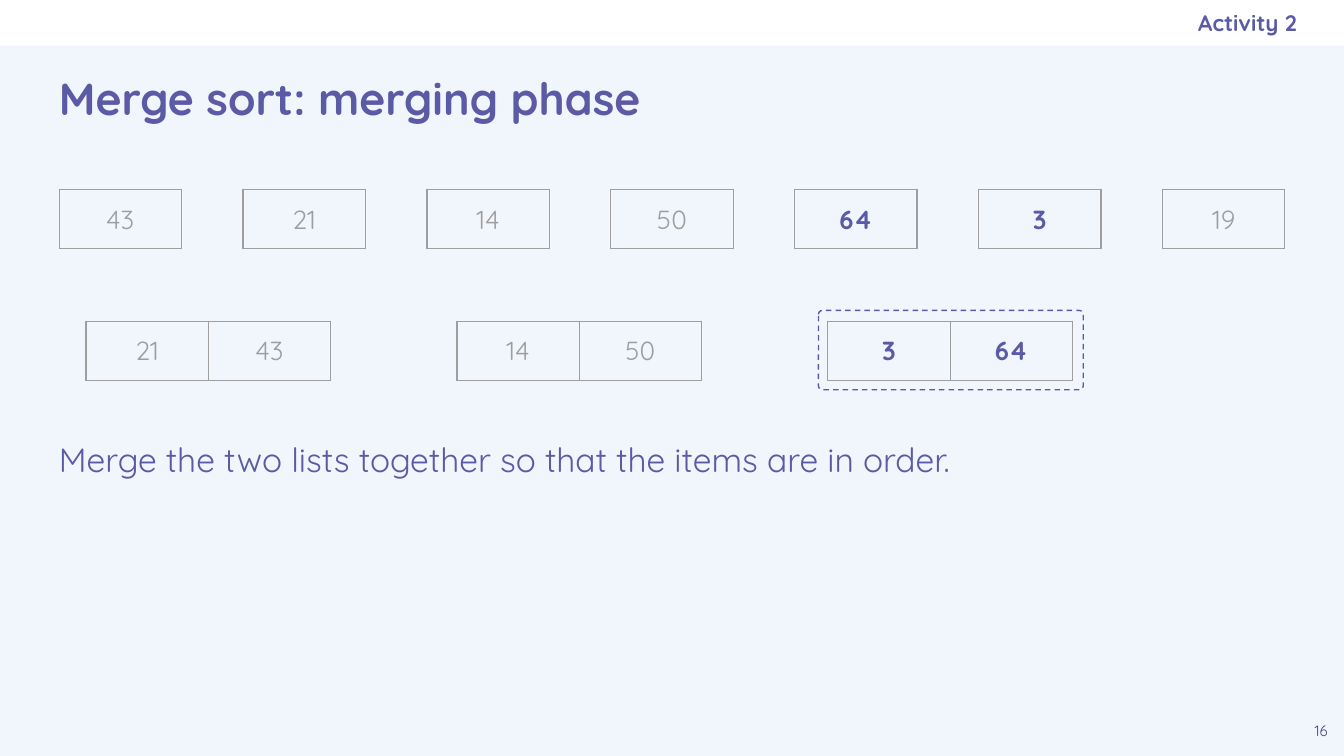
from lxml import etree
from pptx import Presentation
from pptx.dml.color import RGBColor
from pptx.enum import dml, shapes, text
from pptx.oxml.ns import qn
from pptx.util import Inches, Pt

PALE = RGBColor(0xF1, 0xF5, 0xFC)
WHITE = RGBColor(0xFF, 0xFF, 0xFF)
PURPLE = RGBColor(0x5B, 0x5B, 0xA5)
DARK = RGBColor(0x49, 0x49, 0x85)
GREY = RGBColor(0x9E, 0x9E, 0x9E)
LEFT, MID, RIGHT = text.PP_ALIGN.LEFT, text.PP_ALIGN.CENTER, text.PP_ALIGN.RIGHT
TOP, CENTER = text.MSO_ANCHOR.TOP, text.MSO_ANCHOR.MIDDLE

# Widescreen, 16 to 9
deck = Presentation()
deck.slide_width = Inches(10)
deck.slide_height = Inches(10 * 9 / 16)
slide = deck.slides.add_slide(deck.slide_layouts[6])
slide.background.fill.solid()
slide.background.fill.fore_color.rgb = PALE


def write(words, box=None, frame=None, size=14, color=PURPLE, bold=False,
          align=LEFT, anchor=TOP, right=0.1, top=0.1):
    """Fill a frame, or a new text box at box, with one paragraph."""
    if frame is None:
        frame = slide.shapes.add_textbox(*map(Inches, box)).text_frame
        frame.word_wrap = True
        frame.vertical_anchor = anchor
        frame.margin_left = frame.margin_bottom = Inches(0.1)
        frame.margin_top = Inches(top)
        frame.margin_right = Inches(right)
    para = frame.paragraphs[0]
    para.alignment = align
    run = para.add_run()
    run.text = words
    font = run.font
    font.name, font.size, font.bold = "Quicksand", Pt(size), bold
    font.color.rgb = color
    return para


def add_list(items, left, top, active):
    """Draw a one-row table of list items with grey borders."""
    wide, high = 0.91, 0.44
    grid = slide.shapes.add_table(1, len(items), Inches(left), Inches(top),
                                  Inches(wide * len(items)), Inches(high)).table
    grid.first_row = grid.horz_banding = False
    for col, item in enumerate(items):
        grid.columns[col].width = Inches(wide)
        cell = grid.cell(0, col)
        cell.margin_left = cell.margin_right = Inches(0.1)
        cell.margin_top = cell.margin_bottom = Inches(0.1)
        write(str(item), frame=cell.text_frame, align=MID, bold=active,
              color=PURPLE if active else GREY)
        props = cell._tc.get_or_add_tcPr()
        for side in ("a:lnL", "a:lnR", "a:lnT", "a:lnB"):
            line = etree.SubElement(props, qn(side), w=str(Pt(0.75)))
            fill = etree.SubElement(line, qn("a:solidFill"))
            etree.SubElement(fill, qn("a:srgbClr"), val=str(GREY))
        cell.fill.background()


# Top band, page number and heading
band = slide.shapes.add_shape(shapes.MSO_SHAPE.RECTANGLE, 0, 0, Inches(10), Inches(0.34))
band.shadow.inherit = False
band.fill.solid()
band.fill.fore_color.rgb = WHITE
band.line.fill.background()
write("16", (9.66, 5.28, 0.34, 0.34), size=8, color=DARK, align=MID, top=0.14)
write("Activity 2", (5.75, 0, 3.9, 0.34), size=12, bold=True, align=RIGHT,
      anchor=CENTER, right=0)
write("Merge sort: merging phase", (0.34, 0.34, 9.32, 0.77), size=24, bold=True,
      anchor=CENTER)

# Single items, then the merged pairs
for spot, item in enumerate([43, 21, 14, 50, 64, 3, 19]):
    add_list([item], 0.44 + 8.21 / 6 * spot, 1.41, item in (64, 3))
for spot, pair in enumerate([(21, 43), (14, 50), (3, 64)]):
    add_list(pair, 0.64 + 2.76 * spot, 2.39, spot == 2)

# Dashed frame around the current pair
ring = slide.shapes.add_shape(shapes.MSO_SHAPE.ROUNDED_RECTANGLE, Inches(6.09),
                              Inches(2.31), Inches(1.97), Inches(0.59))
ring.adjustments[0] = 0.05
ring.shadow.inherit = False
ring.fill.background()
ring.line.color.rgb = PURPLE
ring.line.width = Pt(0.75)
ring.line.dash_style = dml.MSO_LINE.DASH

# Instruction
note = write("Merge the two lists together so that the items are in order.",
             (0.34, 3.12, 9.32, 1.41), size=18)
note.line_spacing = 1.15
note.space_after = Pt(16)

deck.save("out.pptx")
